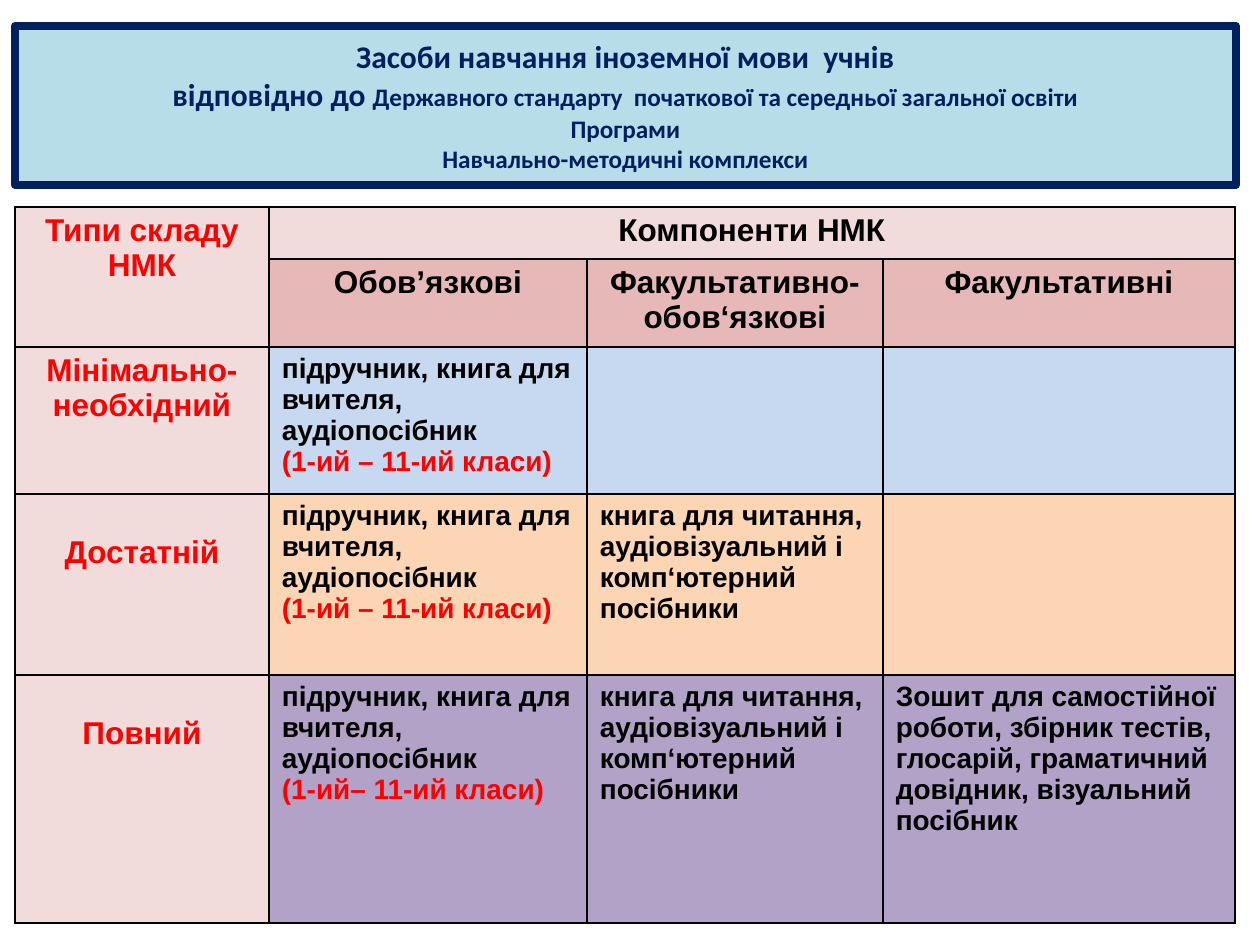
"""Build a slide on the components of language teaching kits."""
from dataclasses import dataclass

from lxml.etree import SubElement
from pptx import Presentation
from pptx.dml.color import RGBColor
from pptx.enum.shapes import MSO_SHAPE
from pptx.enum.text import MSO_ANCHOR, PP_ALIGN
from pptx.oxml.ns import qn
from pptx.util import Emu, Pt

SCALE = 914400 / 126
NAVY, RED, BLACK = "002060", "FF0000", "000000"
PINK, ROSE, BLUE, PEACH, LILAC = "F2DCDB", "E6B9B8", "C6D9F1", "FCD5B5", "B3A2C7"
COLS = (254, 318, 296, 352)
ROWS = (52, 88, 147, 181, 248)
LINE = 35


@dataclass(frozen=True)
class Run:
    """Text with one look."""
    text: str
    color: str = BLACK
    size: float = 16
    font: str = "Arial"


@dataclass(frozen=True)
class Cell:
    """A table cell with its lines, each a tuple of runs."""
    row: int
    col: int
    fill: str
    lines: tuple = ()
    center: bool = False
    drop: int = 0
    down: int = 1
    across: int = 1


def px(value: int) -> Emu:
    """Turn pixels into EMU."""
    return Emu(round(value * SCALE))


def rgb(code: str) -> RGBColor:
    """Turn a hex string into a colour."""
    return RGBColor.from_string(code)


def apply(target: object, values: dict) -> None:
    """Set each named attribute on the target."""
    for name, value in values.items():
        setattr(target, name, value)


def paint(target: object, code: str) -> None:
    """Give the target a solid fill."""
    target.fill.solid()
    target.fill.fore_color.rgb = rgb(code)


def write(frame: object, lines: tuple, center: bool) -> None:
    """Write lines of runs, one paragraph each."""
    for index, line in enumerate(lines):
        para = frame.add_paragraph() if index else frame.paragraphs[0]
        para.alignment = PP_ALIGN.CENTER if center else PP_ALIGN.LEFT
        for item in line:
            run = para.add_run()
            run.text = item.text
            apply(run.font, {"name": item.font, "size": Pt(item.size), "bold": True})
            run.font.color.rgb = rgb(item.color)


def border(cell: object) -> None:
    """Draw a thin black line on each side of a cell."""
    props = cell._tc.get_or_add_tcPr()
    for side in ("lnL", "lnR", "lnT", "lnB"):
        edge = SubElement(props, qn(f"a:{side}"), w=str(Pt(1)))
        solid = SubElement(edge, qn("a:solidFill"))
        SubElement(solid, qn("a:srgbClr"), val=BLACK)


def title(slide: object) -> None:
    """Draw the framed title."""
    box = slide.shapes.add_shape(
        MSO_SHAPE.RECTANGLE, px(15), px(26), px(1221), px(159))
    box.shadow.inherit = False
    paint(box, "B7DEE8")
    box.line.color.rgb = rgb(NAVY)
    box.line.width = Pt(4.5)
    apply(box.text_frame, {"word_wrap": True, "vertical_anchor": MSO_ANCHOR.MIDDLE})

    def big(text: str) -> Run:
        return Run(text, NAVY, 18, "Calibri")

    def small(text: str) -> Run:
        return Run(text, NAVY, 14.4, "Calibri")

    write(box.text_frame, (
        (big("Засоби навчання іноземної мови  учнів"),),
        (big("відповідно до "),
         small("Державного стандарту  початкової та середньої загальної освіти")),
        (small("Програми"),),
        (small("Навчально-методичні комплекси"),),
    ), True)


def head(row: int, col: int, text: str, fill: str = PINK,
         color: str = RED, **extra: int) -> Cell:
    """Describe a centred heading cell."""
    return Cell(row, col, fill, ((Run(text, color, 18),),), True, **extra)


def plan() -> list[Cell]:
    """List all the cells of the table."""
    cells = [head(0, 0, "Типи складу НМК", down=2),
             head(0, 1, "Компоненти НМК", color=BLACK, across=3)]
    kinds = ("Обов’язкові", "Факультативно-обов‘язкові", "Факультативні")
    cells += [head(1, col, text, ROSE, BLACK) for col, text in enumerate(kinds, 1)]
    base = "підручник, книга для вчителя, аудіопосібник"
    extra = "книга для читання, аудіовізуальний і комп‘ютерний посібники"
    full = ("Зошит для самостійної роботи, збірник тестів, глосарій, "
            "граматичний довідник, візуальний посібник")
    levels = (
        ("Мінімально-необхідний", BLUE, 0, "(1-ий – 11-ий класи)", ()),
        ("Достатній", PEACH, LINE, "(1-ий – 11-ий класи)", (extra,)),
        ("Повний", LILAC, LINE, "(1-ий– 11-ий класи)", (extra, full)),
    )
    for row, (name, fill, drop, years, more) in enumerate(levels, 2):
        cells.append(head(row, 0, name, drop=drop))
        cells.append(Cell(row, 1, fill, ((Run(base),), (Run(years, RED),))))
        for col in (2, 3):
            lines = tuple((Run(text),) for text in more[col - 2:col - 1])
            cells.append(Cell(row, col, fill, lines))
    return cells


def grid(slide: object) -> None:
    """Draw the table."""
    table = slide.shapes.add_table(
        len(ROWS), len(COLS), px(15), px(207), px(sum(COLS)), px(sum(ROWS))).table
    apply(table, {"first_row": False, "horz_banding": False})
    for column, width in zip(table.columns, COLS):
        column.width = px(width)
    for row, height in zip(table.rows, ROWS):
        row.height = px(height)
    for cell in table.iter_cells():
        border(cell)
    for item in plan():
        cell = table.cell(item.row, item.col)
        if item.down > 1 or item.across > 1:
            cell.merge(table.cell(item.row + item.down - 1,
                                  item.col + item.across - 1))
        apply(cell, {"margin_left": px(13), "margin_right": px(13),
                     "margin_top": px(6 + item.drop), "margin_bottom": px(6)})
        paint(cell, item.fill)
        write(cell.text_frame, item.lines, item.center)


def main() -> None:
    """Build and save the slide."""
    deck = Presentation()
    apply(deck, {"slide_width": px(1260), "slide_height": px(945)})
    slide = deck.slides.add_slide(deck.slide_layouts[6])
    title(slide)
    grid(slide)
    deck.save("out.pptx")


if __name__ == "__main__":
    main()
